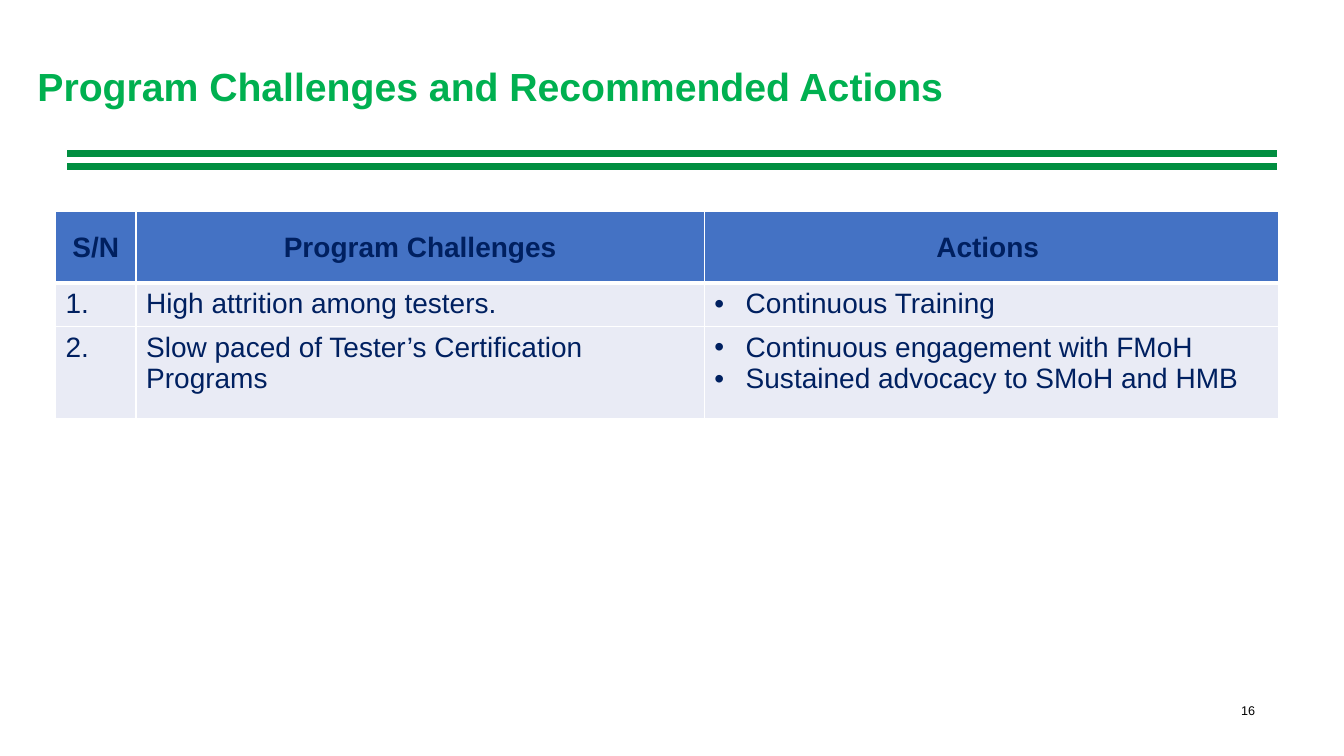
from lxml import etree
from pptx import Presentation
from pptx.dml.color import RGBColor
from pptx.enum import shapes, text
from pptx.oxml import ns
from pptx.util import Cm, Pt

WHITE, NAVY, GREEN, RULE_GREEN = "FFFFFF", "002060", "00B050", "008E40"
HEADER_BLUE, ROW_GREY = "4472C4", "E9EBF5"
LEFT, CENTER, RIGHT = text.PP_ALIGN.LEFT, text.PP_ALIGN.CENTER, text.PP_ALIGN.RIGHT
TOP, MIDDLE = text.MSO_ANCHOR.TOP, text.MSO_ANCHOR.MIDDLE

HEADINGS = ["S/N", "Program Challenges", "Actions "]
CHALLENGES = [
    ("High attrition among testers.", ["Continuous Training"]),
    ("Slow paced of Tester’s Certification Programs",
     ["Continuous engagement with FMoH", "Sustained advocacy to SMoH and HMB"]),
]


def color(value):
    return RGBColor.from_string(value)


def add_bullet(p):
    pPr = p._p.get_or_add_pPr()
    pPr.set("marL", str(Cm(0.79)))
    pPr.set("indent", str(-Cm(0.79)))
    etree.SubElement(pPr, ns.qn("a:buFont"), typeface="Arial")
    etree.SubElement(pPr, ns.qn("a:buChar"), char="•")


def write(tf, lines, size=20, fill=NAVY, bold=False, align=LEFT, bullet=False, spacing=None):
    """Write one paragraph for each line into a text frame."""
    tf.word_wrap = True
    for i, line in enumerate(lines):
        p = tf.paragraphs[0] if i == 0 else tf.add_paragraph()
        p.alignment = align
        if spacing:
            p.line_spacing = spacing
        if bullet:
            add_bullet(p)
        r = p.add_run()
        r.text = line
        r.font.name, r.font.size, r.font.bold = "Arial", Pt(size), bold
        r.font.color.rgb = color(fill)


def add_title(slide, title):
    sp = slide.shapes.title
    sp.left, sp.top, sp.width, sp.height = Cm(0.69), Cm(1.6), Cm(30.61), Cm(1.27)
    sp.text_frame.vertical_anchor = MIDDLE
    sp.text_frame.auto_size = text.MSO_AUTO_SIZE.NONE
    write(sp.text_frame, [title], size=28, fill=GREEN, bold=True, spacing=0.9)


def add_rule(slide, y):
    line = slide.shapes.add_connector(
        shapes.MSO_CONNECTOR.STRAIGHT, Cm(1.7), Cm(y), Cm(32.18), Cm(y))
    line.line.color.rgb = color(RULE_GREEN)
    line.line.width = Pt(5)
    etree.SubElement(line._element.spPr, ns.qn("a:effectLst"))


def add_page_number(slide, number):
    sp = slide.shapes.add_textbox(Cm(23.98), Cm(17.58), Cm(7.9), Cm(1.32))
    write(sp.text_frame, [number], size=9, fill="000000", align=RIGHT)


def set_borders(cell, top, bottom):
    """Draw white cell borders; top and bottom widths are in points."""
    tcPr = cell._tc.get_or_add_tcPr()
    for i, (side, width) in enumerate([("L", 1), ("R", 1), ("T", top), ("B", bottom)]):
        ln = etree.Element(ns.qn("a:ln" + side), w=str(Pt(width)))
        fill = etree.SubElement(ln, ns.qn("a:solidFill"))
        etree.SubElement(fill, ns.qn("a:srgbClr"), val=WHITE)
        tcPr.insert(i, ln)


def fill_cell(cell, row, lines, **fmt):
    cell.fill.solid()
    cell.fill.fore_color.rgb = color(ROW_GREY if row else HEADER_BLUE)
    cell.vertical_anchor = TOP if row else MIDDLE
    set_borders(cell, top=3 if row == 1 else 1, bottom=1 if row else 3)
    write(cell.text_frame, lines, **fmt)


def add_challenge_table(slide):
    widths, heights = [2.03, 14.32, 14.48], [1.8, 1.1, 2.31]
    table = slide.shapes.add_table(
        len(heights), len(widths), Cm(1.4), Cm(5.33),
        Cm(sum(widths)), Cm(sum(heights))).table
    for column, width in zip(table.columns, widths):
        column.width = Cm(width)
    for row, height in zip(table.rows, heights):
        row.height = Cm(height)
    for col, heading in enumerate(HEADINGS):
        fill_cell(table.cell(0, col), 0, [heading], bold=True, align=CENTER)
    for row, (challenge, actions) in enumerate(CHALLENGES, start=1):
        fill_cell(table.cell(row, 0), row, [f"{row}."])
        fill_cell(table.cell(row, 1), row, [challenge])
        fill_cell(table.cell(row, 2), row, actions, bullet=True)


def main():
    prs = Presentation()
    prs.slide_width, prs.slide_height = Cm(33.87), Cm(19.05)
    slide = prs.slides.add_slide(prs.slide_layouts.get_by_name("Title Only"))
    add_page_number(slide, "16")
    for y in (4.19, 3.86):
        add_rule(slide, y)
    add_title(slide, "Program Challenges and Recommended Actions")
    add_challenge_table(slide)
    prs.save("out.pptx")


if __name__ == "__main__":
    main()
